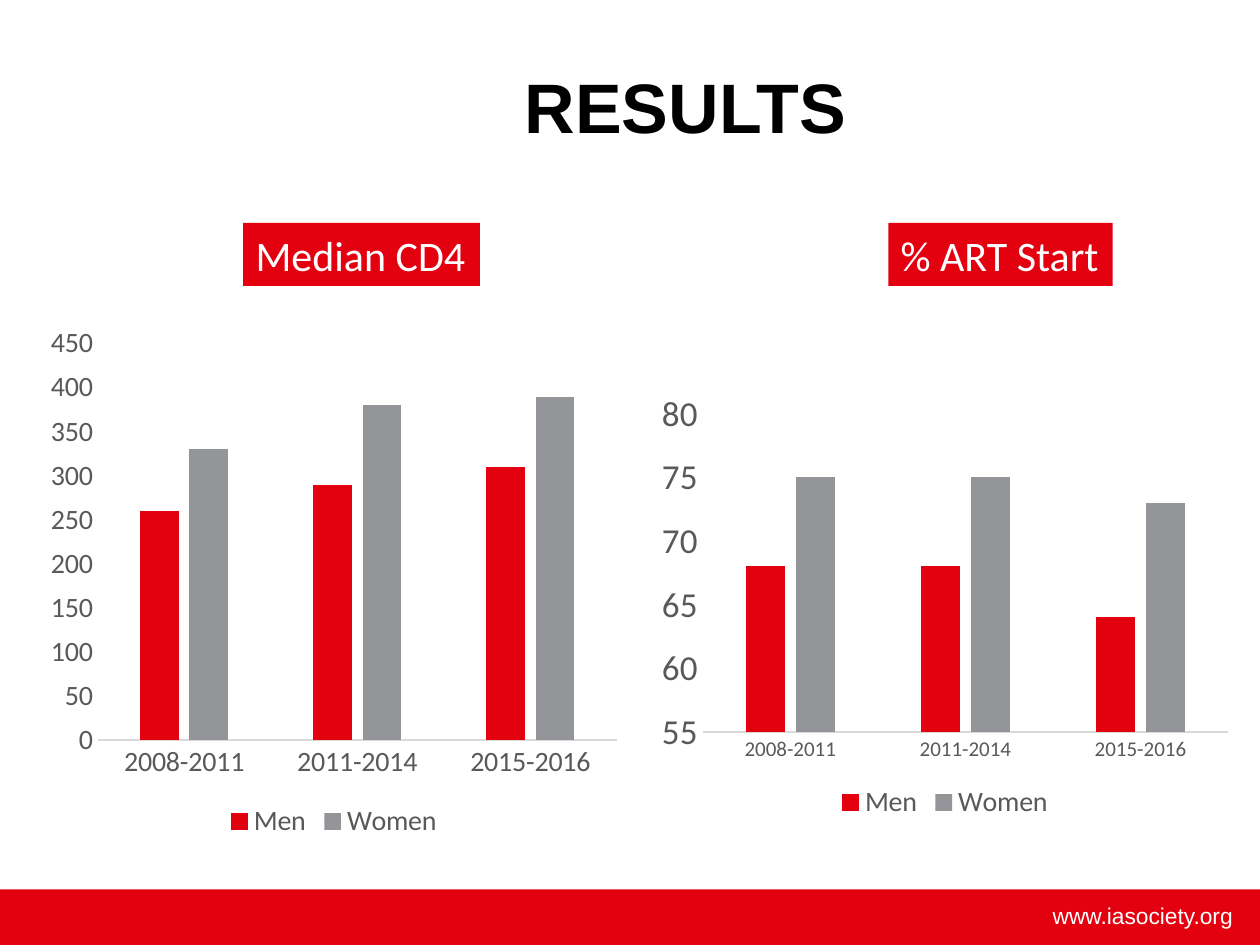
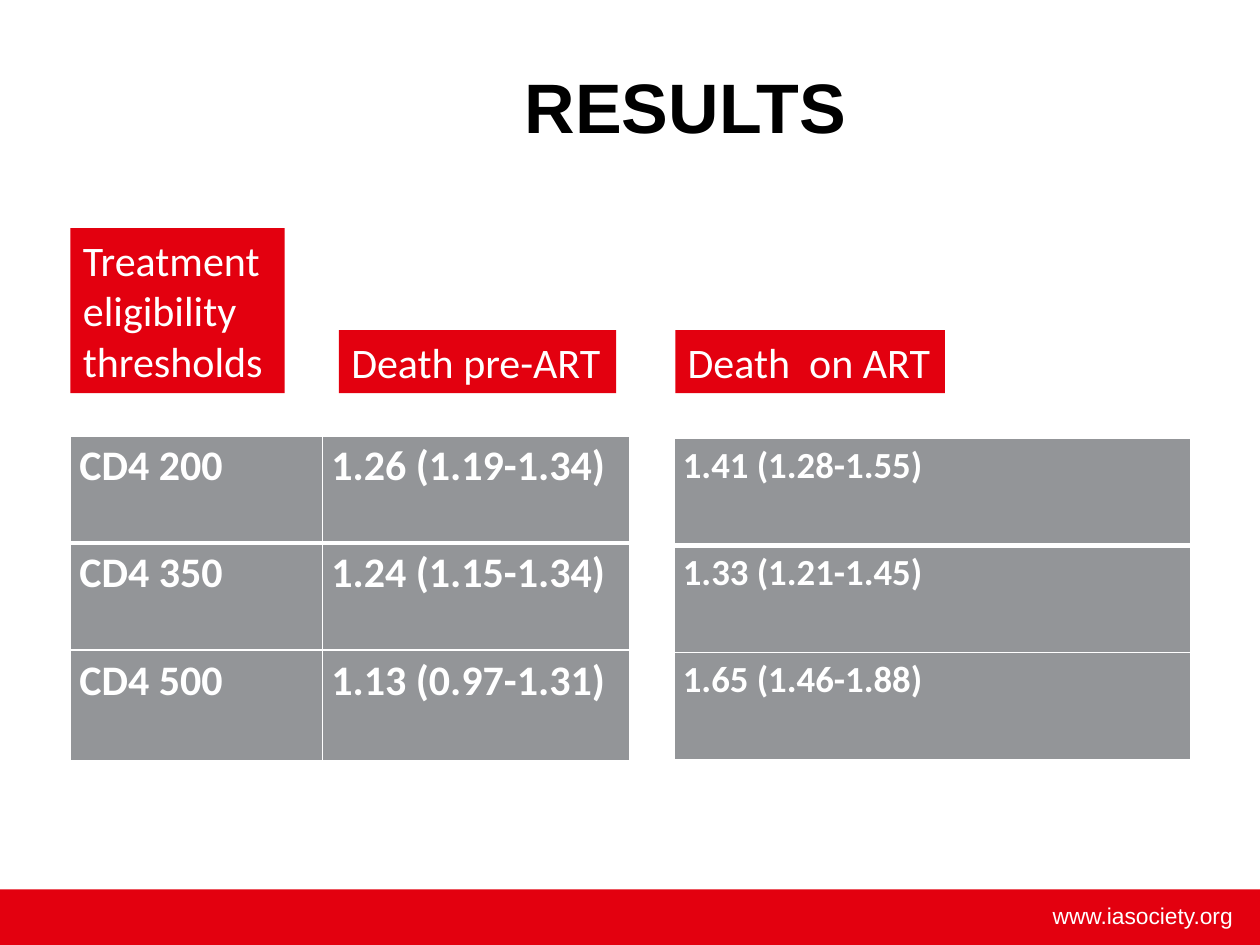
from lxml.etree import SubElement
from pptx import Presentation
from pptx.chart.data import CategoryChartData
from pptx.dml.color import RGBColor
from pptx.enum.chart import XL_CHART_TYPE, XL_LEGEND_POSITION, XL_TICK_MARK
from pptx.enum.shapes import MSO_SHAPE
from pptx.enum.text import MSO_ANCHOR, MSO_AUTO_SIZE, PP_ALIGN
from pptx.oxml.ns import qn
from pptx.util import Inches, Pt

COLORS = {"red": "E3000F", "gray": "939598", "white": "FFFFFF",
          "black": "000000", "label": "595959", "axis": "D9D9D9"}
HEADING, BODY = "Arial", "Calibri"
SLIDE_W, SLIDE_H = 10, 7.5
BAND_H = 0.44
TITLE = "RESULTS"
WEBSITE = "www.iasociety.org"

PERIODS = ["2008-2011", "2011-2014", "2015-2016"]
SERIES_COLORS = {"Men": "red", "Women": "gray"}
CHARTS = [
    {"box": (0.31, 2.51, 4.68, 4.19), "scale": (0, 450, 50), "sizes": (16, 16),
     "values": {"Men": (260, 290, 310), "Women": (330, 380, 390)}},
    {"box": (5.16, 3.04, 4.68, 3.51), "scale": (55, 80, 5), "sizes": (12, 20),
     "values": {"Men": (68, 68, 64), "Women": (75, 75, 73)}},
]
CHART_LABELS = [
    (["Median CD4"], (1.93, 1.77, 1.88, 0.5)),
    (["% ART Start"], (7.05, 1.77, 1.78, 0.5)),
]

TABLES = [
    {"corner": (0.56, 3.46), "columns": (2, 2.44), "rows": (0.85, 0.85, 0.88), "size": 24,
     "cells": [("CD4 200", "1.26 (1.19-1.34)"),
               ("CD4 350", "1.24 (1.15-1.34)"),
               ("CD4 500", "1.13 (0.97-1.31)")]},
    {"corner": (5.35, 3.48), "columns": (4.1,), "rows": (0.85, 0.85, 0.85), "size": 21,
     "cells": [("1.41 (1.28-1.55)",), ("1.33 (1.21-1.45)",), ("1.65 (1.46-1.88)",)]},
]
TABLE_LABELS = [
    (["Treatment", "eligibility", "thresholds"], (0.56, 1.81, 1.7, 1.31)),
    (["Death pre-ART"], (2.69, 2.62, 2.2, 0.5)),
    (["Death  on ART"], (5.36, 2.62, 2.14, 0.5)),
]


def rgb(name):
    return RGBColor.from_string(COLORS[name])


def inches(lengths):
    return [Inches(length) for length in lengths]


def paint(target, color):
    target.fill.solid()
    target.fill.fore_color.rgb = rgb(color)


def style(font, size, color, name=BODY, bold=False):
    font.size, font.name, font.bold = Pt(size), name, bold
    font.color.rgb = rgb(color)


def add_footer(slide, master):
    """Draw the band and web address, then hand them to the master for all slides."""
    band = slide.shapes.add_shape(
        MSO_SHAPE.RECTANGLE, *inches((0, SLIDE_H - BAND_H, SLIDE_W, BAND_H)))
    band.shadow.inherit = False
    paint(band, "red")
    band.line.fill.background()
    address = slide.shapes.add_textbox(*inches((6.57, 7.11, 3.31, 0.32)))
    address.text_frame.word_wrap = True
    paragraph = address.text_frame.paragraphs[0]
    paragraph.text = WEBSITE
    paragraph.alignment = PP_ALIGN.RIGHT
    style(paragraph.font, 13, "white", HEADING)
    for part in (band, address):
        master.shapes.element.append(part.element)


def add_results_slide(prs):
    slide = prs.slides.add_slide(prs.slide_layouts.get_by_name("Title Only"))
    title = slide.shapes.title
    title.left, title.top, title.width, title.height = inches((1.38, 0.21, 8.12, 1.25))
    title.text_frame.vertical_anchor = MSO_ANCHOR.MIDDLE
    paragraph = title.text_frame.paragraphs[0]
    paragraph.text = TITLE
    paragraph.alignment = PP_ALIGN.CENTER
    style(paragraph.font, 40, "black", HEADING, bold=True)
    return slide


def add_label(slide, lines, box):
    label = slide.shapes.add_textbox(*inches(box))
    paint(label, "red")
    frame = label.text_frame
    frame.text = "\n".join(lines)
    frame.word_wrap = False
    frame.auto_size = MSO_AUTO_SIZE.SHAPE_TO_FIT_TEXT
    for paragraph in frame.paragraphs:
        style(paragraph.font, 24, "white")


def add_column_chart(slide, box, scale, sizes, values):
    data = CategoryChartData()
    data.categories = PERIODS
    for group, numbers in values.items():
        data.add_series(group, numbers)
    chart = slide.shapes.add_chart(
        XL_CHART_TYPE.COLUMN_CLUSTERED, *inches(box), data).chart
    style(chart.font, 10, "black")
    chart.has_title = False
    chart.has_legend = True
    chart.legend.position = XL_LEGEND_POSITION.BOTTOM
    chart.legend.include_in_layout = False
    style(chart.legend.font, 16, "label")

    periods, amounts = chart.category_axis, chart.value_axis
    for axis, size in zip((periods, amounts), sizes):
        axis.major_tick_mark = axis.minor_tick_mark = XL_TICK_MARK.NONE
        axis.has_major_gridlines = False
        style(axis.tick_labels.font, size, "label")
    periods.format.line.color.rgb = rgb("axis")
    periods.format.line.width = Pt(0.75)
    amounts.format.line.fill.background()
    amounts.minimum_scale, amounts.maximum_scale, amounts.major_unit = scale

    plot = chart.plots[0]
    plot.gap_width, plot.overlap, plot.vary_by_categories = 219, -27, False
    for series in plot.series:
        paint(series.format, SERIES_COLORS[series.name])


def add_borders(cell, widths):
    """Put white lines on a cell's sides; widths maps L, R, T, B to points."""
    properties = cell._tc.get_or_add_tcPr()
    for side in "LRTB":
        line = SubElement(properties, qn(f"a:ln{side}"), w=str(Pt(widths[side])))
        fill = SubElement(line, qn("a:solidFill"))
        SubElement(fill, qn("a:srgbClr"), val=COLORS["white"])


def add_risk_table(slide, corner, columns, rows, size, cells):
    extent = (sum(columns), sum(rows))
    table = slide.shapes.add_table(
        len(rows), len(columns), *inches(corner + extent)).table
    for column, width in zip(table.columns, columns):
        column.width = Inches(width)
    for r, (row, height) in enumerate(zip(table.rows, rows)):
        row.height = Inches(height)
        widths = {"L": 1, "R": 1, "T": 3 if r == 1 else 1, "B": 3 if r == 0 else 1}
        for cell, wording in zip(row.cells, cells[r]):
            cell.margin_left = cell.margin_right = Inches(0.07)
            cell.margin_top = cell.margin_bottom = Inches(0.04)
            add_borders(cell, widths)
            paint(cell, "gray")
            cell.text = wording
            style(cell.text_frame.paragraphs[0].font, size, "white", bold=True)


def main():
    prs = Presentation()
    prs.slide_width, prs.slide_height = inches((SLIDE_W, SLIDE_H))

    trends = add_results_slide(prs)
    add_footer(trends, prs.slide_master)
    for chart in CHARTS:
        add_column_chart(trends, **chart)
    for lines, box in CHART_LABELS:
        add_label(trends, lines, box)

    deaths = add_results_slide(prs)
    for table in TABLES:
        add_risk_table(deaths, **table)
    for lines, box in TABLE_LABELS:
        add_label(deaths, lines, box)

    prs.save("out.pptx")


if __name__ == "__main__":
    main()
